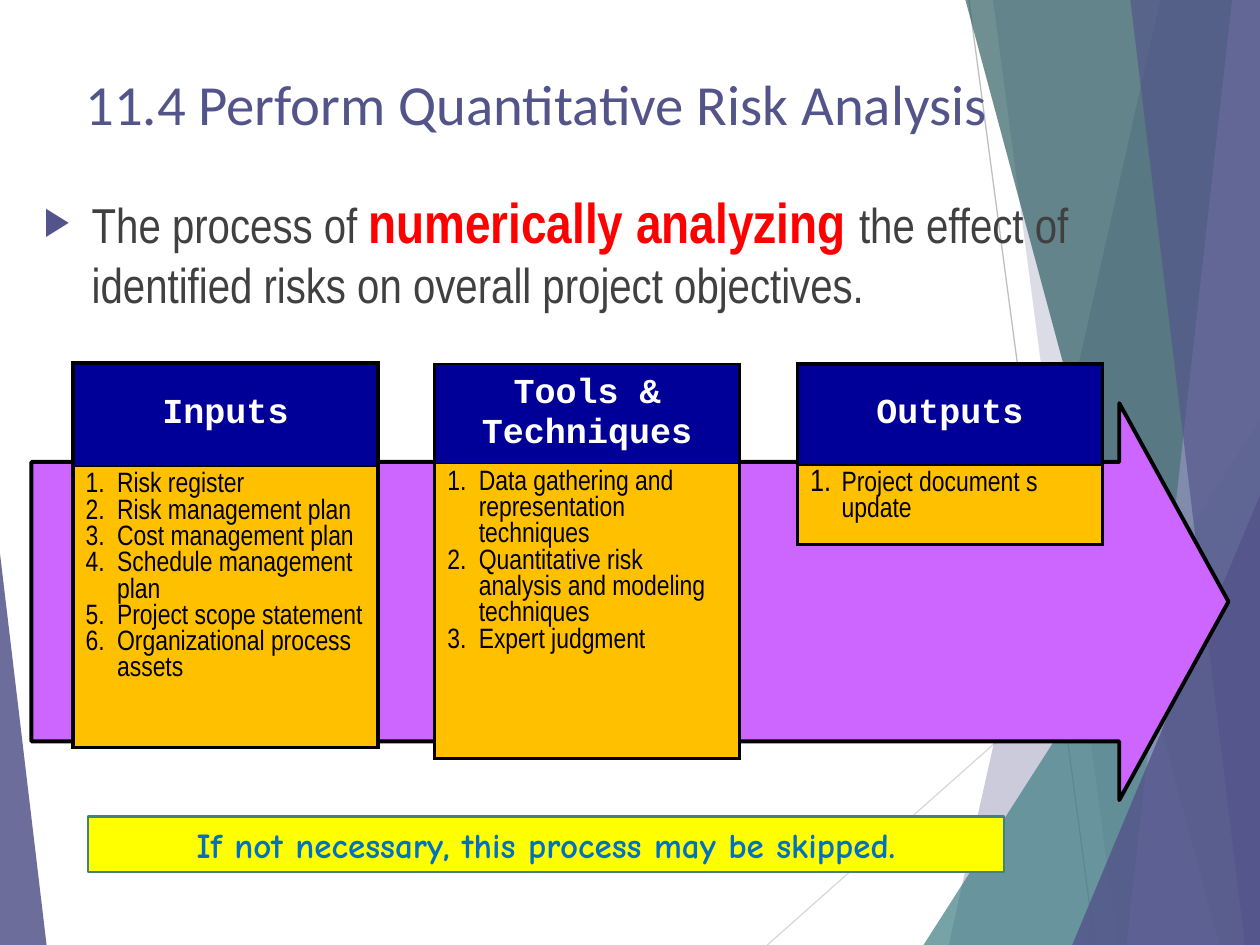
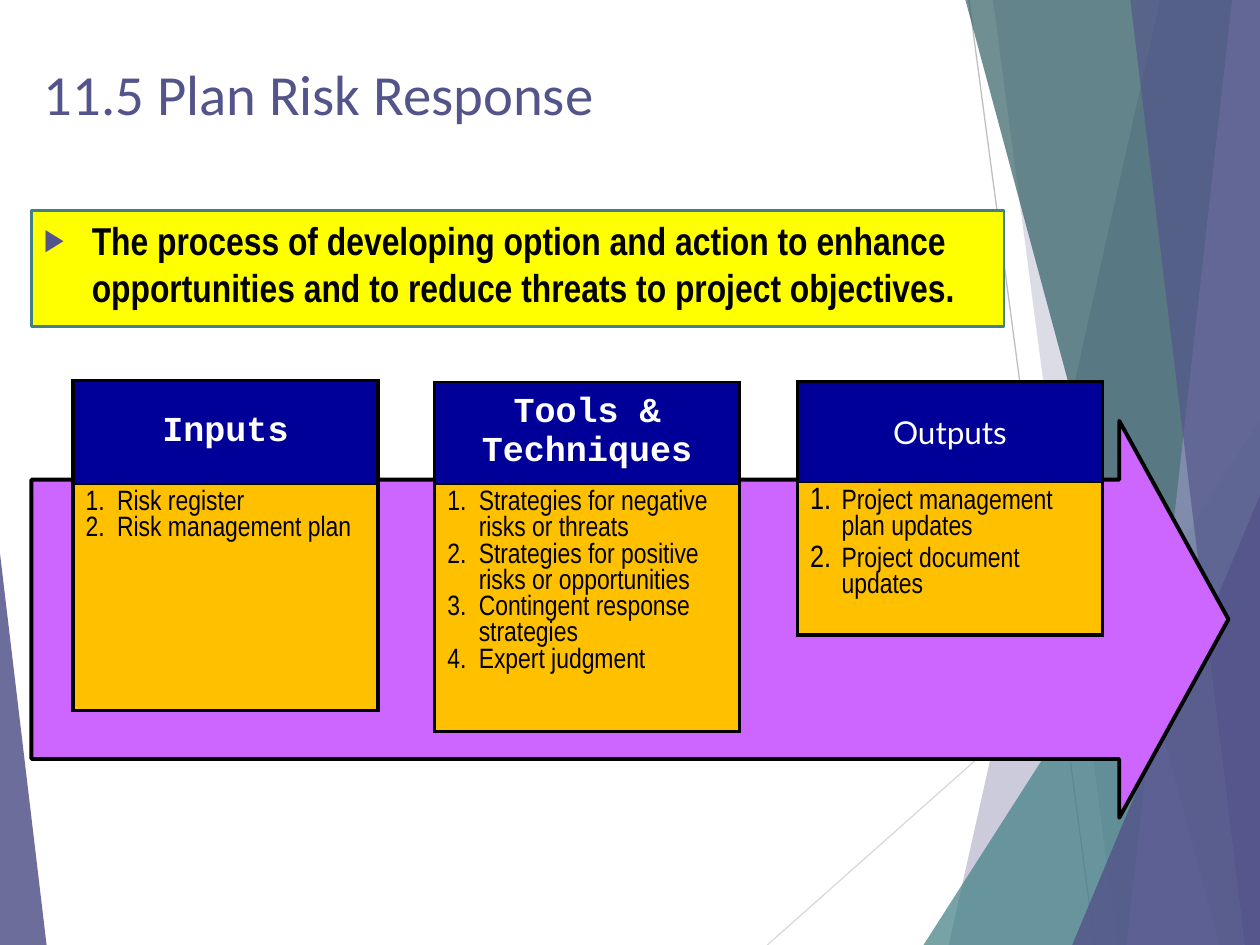
from lxml import etree
from pptx import Presentation
from pptx.dml.color import RGBColor
from pptx.enum.shapes import MSO_CONNECTOR as Connector, MSO_SHAPE as Shape
from pptx.enum.text import MSO_ANCHOR as Anchor, PP_ALIGN as Align
from pptx.oxml.ns import qn
from pptx.util import Inches, Pt

# ---- Content ----
INDIGO, TEAL, DARK_TEAL, LILAC = "53548A", "438086", "326065", "9394BE"
NAVY, AMBER, PURPLE, YELLOW = "000099", "FFC000", "CC66FF", "FFFF00"
BLACK, WHITE, GREY, RED, BLUE = "000000", "FFFFFF", "404040", "FF0000", "0070C0"

HEAD_FONT = ("Courier New", 20, WHITE, True)
ITEM_FONT = ("Arial Narrow", 16, BLACK, False)
TITLE_FONT = ("Calibri", 32.4, INDIGO, False)

PAGES = [
    {
        "title": ("11.4 Perform Quantitative Risk Analysis", 0.58, 0.5),
        "definition": {
            "at": (0.25, 1.44, 8.33, 0.92),
            "boxed": False,
            "spans": [
                ("The process of ", ("Arial Narrow", 28, GREY, False)),
                ("numerically analyzing ", ("Arial Narrow", 32, RED, True)),
                ("the effect of identified risks on overall project objectives.",
                 ("Arial Narrow", 28, GREY, False)),
            ],
        },
        "flow_top": 2.88,
        "cards": [
            ("Inputs", HEAD_FONT, (0.82, 1.8), [
                "Risk register", "Risk management plan", "Cost management plan",
                "Schedule management plan", "Project scope statement",
                "Organizational process assets"]),
            ("Tools & Techniques", HEAD_FONT, (0.79, 2.34), [
                "Data gathering and representation techniques",
                "Quantitative risk analysis and modeling techniques",
                "Expert judgment"]),
            ("Outputs", HEAD_FONT, (0.8, 0.46), ["Project document s update"]),
        ],
        "note": "If not necessary, this process may be skipped.",
    },
    {
        "title": ("11.5 Plan Risk Response", 0.25, 0.42),
        "definition": {
            "at": (0.25, 1.67, 7.72, 0.92),
            "boxed": True,
            "spans": [
                ("The process of developing option and action to enhance "
                 "opportunities and to reduce threats to project objectives.",
                 ("Arial Narrow", 22.2, BLACK, True)),
            ],
        },
        "flow_top": 3.02,
        "cards": [
            ("Inputs", HEAD_FONT, (0.82, 1.8), ["Risk register", "Risk management plan"]),
            ("Tools & Techniques", HEAD_FONT, (0.81, 1.73), [
                "Strategies for negative risks or threats",
                "Strategies for positive risks or opportunities",
                "Contingent response strategies", "Expert judgment"]),
            ("Outputs", ("Lato", 18, WHITE, False), (0.8, 0.46), [
                "Project management plan updates", "Project document updates"]),
        ],
        "note": None,
    },
]

# Backdrop, back to front
BACK_LINES = [((7.69, 0), (8.69, 7.5), "BFBFBF"), ((10, 4.03), (6.09, 7.5), "D9D9D9")]
BACK_PARTS = [  # bands: top x, bottom x; triangles: box, apex position
    ("band", (9.21, 7.53), INDIGO, 30),
    ("band", (7.88, 8.87), INDIGO, 20),
    ("triangle", ((7.33, 3.33, 2.67, 4.17), 1), TEAL, 72),
    ("band", (7.66, 9.68), DARK_TEAL, 70),
    ("band", (9.78, 8.94), LILAC, 70),
    ("band", (8.97, 9.88), INDIGO, 65),
    ("triangle", ((8.51, 3.93, 1.49, 3.57), 1), INDIGO, 80),
    ("triangle", ((0, 4.39, 0.37, 3.11), 0), INDIGO, 85),
]

# Card columns: left, offset from the flow top, top border, numeral size in percent
CARD_WIDTH = 2.42
CARD_COLUMNS = [(0.58, 0, 2.25, 100), (3.45, 0.01, 1, 100), (6.33, 0.01, 2.25, 110)]


# ---- Helpers ----
def color(value):
    return RGBColor.from_string(value)


def inches(values):
    return [Inches(value) for value in values]


def add_xml(parent, tag, **attributes):
    child = etree.SubElement(parent, qn(tag))
    for name, value in attributes.items():
        child.set(name, str(value))
    return child


def set_font(font, style):
    font.name, size, shade, font.bold = style
    font.size = Pt(size)
    font.color.rgb = color(shade)


def paint(shape, fill, line=None, width=0, opacity=100):
    shape.shadow.inherit = False
    shape.fill.solid()
    shape.fill.fore_color.rgb = color(fill)
    if opacity < 100:
        shade = shape.fill._xPr.find(qn("a:solidFill"))[0]
        add_xml(shade, "a:alpha", val=opacity * 1000)
    if line:
        shape.line.color.rgb = color(line)
        shape.line.width = Pt(width)
    else:
        shape.line.fill.background()


def set_bullet(para, indent, percent, char=None, shade=None):
    props = para._p.get_or_add_pPr()
    props.set("marL", str(Inches(indent)))
    props.set("indent", str(-Inches(indent)))
    if shade:
        add_xml(add_xml(props, "a:buClr"), "a:srgbClr", val=shade)
    add_xml(props, "a:buSzPct", val=percent * 1000)
    if char:
        add_xml(props, "a:buFont", typeface="Arial")
        add_xml(props, "a:buChar", char=char)
    else:
        add_xml(props, "a:buAutoNum", type="arabicPeriod")


def fill_cell(cell, fill, top, bottom):
    props = cell._tc.get_or_add_tcPr()
    for side, width in (("L", 2.25), ("R", 2.25), ("T", top), ("B", bottom)):
        border = add_xml(props, f"a:ln{side}", w=Pt(width))
        add_xml(add_xml(border, "a:solidFill"), "a:srgbClr", val=BLACK)
    cell.fill.solid()
    cell.fill.fore_color.rgb = color(fill)


# ---- Slide parts ----
def add_backdrop(page):
    for start, end, shade in BACK_LINES:
        line = page.shapes.add_connector(Connector.STRAIGHT, *inches(start + end))
        line.line.color.rgb = color(shade)
        line.line.width = Pt(0.75)
        add_xml(line._element.spPr, "a:effectLst")
    for kind, place, shade, opacity in BACK_PARTS:
        if kind == "band":
            top_x, bottom_x = place
            corners = [inches(corner) for corner in
                       ((top_x, -0.01), (10, -0.01), (10, 7.5), (bottom_x, 7.5))]
            outline = page.shapes.build_freeform(*corners[0], scale=1.0)
            outline.add_line_segments(corners[1:], close=True)
            part = outline.convert_to_shape()
        else:
            box, apex = place
            part = page.shapes.add_shape(Shape.ISOSCELES_TRIANGLE, *inches(box))
            part.adjustments[0] = apex
        paint(part, shade, opacity=opacity)


def add_title(page, text, left, top):
    box = page.shapes.add_textbox(*inches((left, top, 8.33, 0.5)))
    box.text_frame.word_wrap = True
    para = box.text_frame.paragraphs[0]
    para.text = text
    set_font(para.font, TITLE_FONT)


def add_definition(page, at, boxed, spans):
    if boxed:
        box = page.shapes.add_shape(Shape.RECTANGLE, *inches(at))
        paint(box, YELLOW, TEAL, 1.5)
    else:
        box = page.shapes.add_textbox(*inches(at))
    frame = box.text_frame
    frame.word_wrap = True
    frame.vertical_anchor = Anchor.TOP
    para = frame.paragraphs[0]
    para.alignment = Align.LEFT
    set_bullet(para, 0.38, 80, "▶", INDIGO)
    for text, style in spans:
        span = para.add_run()
        span.text = text
        set_font(span.font, style)


def add_arrow(page, top):
    arrow = page.shapes.add_shape(Shape.RIGHT_ARROW, *inches((0.25, top, 9.5, 3.15)))
    arrow.adjustments[0], arrow.adjustments[1] = 0.704, 0.275
    paint(arrow, PURPLE, BLACK, 2.25)


def add_card(page, flow_top, column, card):
    left, offset, top_border, percent = column
    heading, heading_font, heights, items = card
    at = (left, flow_top + offset, CARD_WIDTH, sum(heights))
    table = page.shapes.add_table(2, 1, *inches(at)).table
    table.first_row = table.horz_banding = False
    for row, height in zip(table.rows, heights):
        row.height = Inches(height)

    head, body = table.cell(0, 0), table.cell(1, 0)
    fill_cell(head, NAVY, top_border, 1)
    fill_cell(body, AMBER, 1, 2.25)

    head.vertical_anchor = Anchor.MIDDLE
    para = head.text_frame.paragraphs[0]
    para.text = heading
    para.alignment = Align.CENTER
    set_font(para.font, heading_font)

    body.text = "\n".join(items)
    for index, para in enumerate(body.text_frame.paragraphs):
        if index and percent > 100:
            para.space_before = Pt(3.2)
        set_bullet(para, 0.25, percent)
        set_font(para.font, ITEM_FONT)


def add_note(page, text):
    box = page.shapes.add_shape(Shape.RECTANGLE, *inches((0.7, 6.48, 7.27, 0.44)))
    paint(box, YELLOW, TEAL, 1.5)
    box.text_frame.word_wrap = True
    box.text_frame.vertical_anchor = Anchor.MIDDLE
    para = box.text_frame.paragraphs[0]
    para.text = text
    para.alignment = Align.CENTER
    set_font(para.font, ("Comic Neue", 20, BLUE, True))


def main():
    deck = Presentation()
    deck.slide_width, deck.slide_height = inches((10, 7.5))
    for content in PAGES:
        page = deck.slides.add_slide(deck.slide_layouts[6])
        add_backdrop(page)
        add_title(page, *content["title"])
        add_definition(page, **content["definition"])
        add_arrow(page, content["flow_top"] + 0.32)
        for column, card in zip(CARD_COLUMNS, content["cards"]):
            add_card(page, content["flow_top"], column, card)
        if content["note"]:
            add_note(page, content["note"])
    deck.save("out.pptx")


if __name__ == "__main__":
    main()
